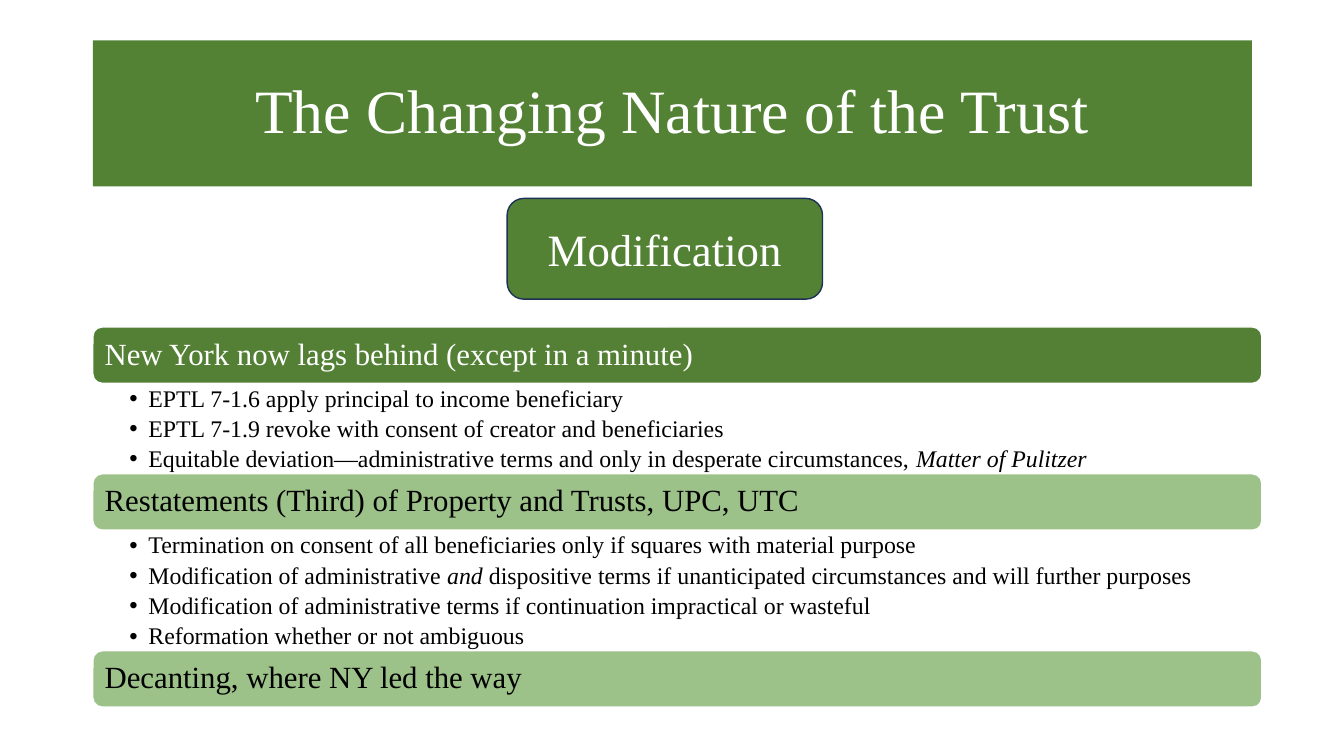
from dataclasses import dataclass

import pptx
import pptx.dml.color
import pptx.enum.shapes
import pptx.enum.text
import pptx.oxml.ns
import pptx.util
from lxml import etree

Cm, Pt = pptx.util.Cm, pptx.util.Pt
ALIGN = pptx.enum.text.PP_ALIGN
ANCHOR = pptx.enum.text.MSO_ANCHOR
ROUNDED = pptx.enum.shapes.MSO_SHAPE.ROUNDED_RECTANGLE


@dataclass(frozen=True)
class Theme:
    font: str = "Times New Roman"
    banner: str = "548235"
    topic_edge: str = "1E3256"
    dark_bar: str = "538035"
    light_bar: str = "9CC189"
    white: str = "FFFFFF"
    black: str = "000000"
    title_size: int = 44
    topic_size: int = 32
    heading_size: int = 22
    bullet_size: int = 17


THEME = Theme()
BAR_HEIGHT = 1.42
BULLET_HEIGHT = 0.76

# Heading, bar colour, text colour, bullets; asterisks enclose italics
SECTIONS = [
    ("New York now lags behind (except in a minute)", THEME.dark_bar, THEME.white, [
        "EPTL 7-1.6 apply principal to income beneficiary",
        "EPTL 7-1.9 revoke with consent of creator and beneficiaries",
        "Equitable deviation—administrative terms and only in desperate circumstances, "
        "*Matter of Pulitzer*",
    ]),
    ("Restatements (Third) of Property and Trusts, UPC, UTC", THEME.light_bar, THEME.black, [
        "Termination on consent of all beneficiaries only if squares with material purpose",
        "Modification of administrative *and* dispositive terms if unanticipated "
        "circumstances and will further purposes",
        "Modification of administrative terms if continuation impractical or wasteful",
        "Reformation whether or not ambiguous",
    ]),
    ("Decanting, where NY led the way", THEME.light_bar, THEME.black, []),
]


def rgb(colour):
    return pptx.dml.color.RGBColor.from_string(colour)


def write(paragraph, text, *, size, colour, align=ALIGN.LEFT, spacing=1.0, after=0):
    """Fill a paragraph, setting the parts between asterisks in italics."""
    paragraph.alignment = align
    paragraph.line_spacing = spacing
    paragraph.space_before = Pt(0)
    paragraph.space_after = Pt(after)
    for index, part in enumerate(text.split("*")):
        if part:
            run = paragraph.add_run()
            run.text = part
            run.font.name = THEME.font
            run.font.size = Pt(size)
            run.font.color.rgb = rgb(colour)
            run.font.italic = index % 2 == 1


def place(shape, box):
    shape.left, shape.top, shape.width, shape.height = (Cm(length) for length in box)


def prepare_frame(shape, anchor, left=0.25, top=0.13, right=0.25, bottom=0.13):
    frame = shape.text_frame
    frame.word_wrap = True
    frame.auto_size = pptx.enum.text.MSO_AUTO_SIZE.NONE
    frame.vertical_anchor = anchor
    frame.margin_left, frame.margin_right = Cm(left), Cm(right)
    frame.margin_top, frame.margin_bottom = Cm(top), Cm(bottom)
    return frame


def set_bullet(paragraph, indent):
    paragraph.level = 1
    properties = paragraph._p.get_or_add_pPr()
    properties.set("marL", str(Cm(indent)))
    properties.set("indent", str(-Cm(indent)))
    bullet = etree.SubElement(properties, pptx.oxml.ns.qn("a:buChar"))
    bullet.set("char", "•")


def rounded_box(slide, box, fill, edge):
    shape = slide.shapes.add_shape(ROUNDED, *(Cm(length) for length in box))
    shape.shadow.inherit = False
    shape.fill.solid()
    shape.fill.fore_color.rgb = rgb(fill)
    shape.line.color.rgb = rgb(edge)
    shape.line.width = Pt(1)
    return shape


def title_banner(slide, box):
    banner = slide.shapes.title
    place(banner, box)
    banner.fill.solid()
    banner.fill.fore_color.rgb = rgb(THEME.banner)
    frame = prepare_frame(banner, ANCHOR.MIDDLE)
    write(frame.paragraphs[0], "The Changing Nature of the Trust", size=THEME.title_size,
          colour=THEME.white, align=ALIGN.CENTER, spacing=0.9)


def topic_box(slide, box):
    topic = rounded_box(slide, box, THEME.banner, THEME.topic_edge)
    frame = prepare_frame(topic, ANCHOR.MIDDLE)
    write(frame.paragraphs[0], "Modification", size=THEME.topic_size,
          colour=THEME.white, align=ALIGN.CENTER)


def heading_bar(slide, box, heading, fill, colour):
    bar = rounded_box(slide, box, fill, THEME.white)
    frame = prepare_frame(bar, ANCHOR.MIDDLE, left=0.23, right=0.23)
    write(frame.paragraphs[0], heading, size=THEME.heading_size, colour=colour, spacing=0.9)


def bullet_list(placeholder, box, bullets):
    place(placeholder, box)
    frame = prepare_frame(placeholder, ANCHOR.TOP, 0.92, 0.08, 0.43, 0)
    for index, bullet in enumerate(bullets):
        paragraph = frame.add_paragraph() if index else frame.paragraphs[0]
        write(paragraph, bullet, size=THEME.bullet_size, colour=THEME.black,
              spacing=0.9, after=3.3)
        set_bullet(paragraph, 0.48)


def section_stack(slide, left, top, width):
    """Stack each heading bar and its list directly below the one before."""
    bodies = iter([p for p in slide.placeholders if p.placeholder_format.idx in (1, 2)])
    for heading, fill, colour, bullets in SECTIONS:
        heading_bar(slide, (left, top, width, BAR_HEIGHT), heading, fill, colour)
        top += BAR_HEIGHT
        if bullets:
            height = BULLET_HEIGHT * len(bullets)
            bullet_list(next(bodies), (left, top, width, height), bullets)
            top += height


def main():
    deck = pptx.Presentation()
    deck.slide_width, deck.slide_height = Cm(33.87), Cm(19.05)
    slide = deck.slides.add_slide(deck.slide_layouts.get_by_name("Two Content"))

    # Title and topic
    title_banner(slide, (2.34, 1.02, 29.21, 3.68))
    topic_box(slide, (12.78, 5, 7.95, 2.54))

    # Sections with their bullets
    section_stack(slide, 2.34, 8.24, 29.46)

    deck.save("out.pptx")


if __name__ == "__main__":
    main()
